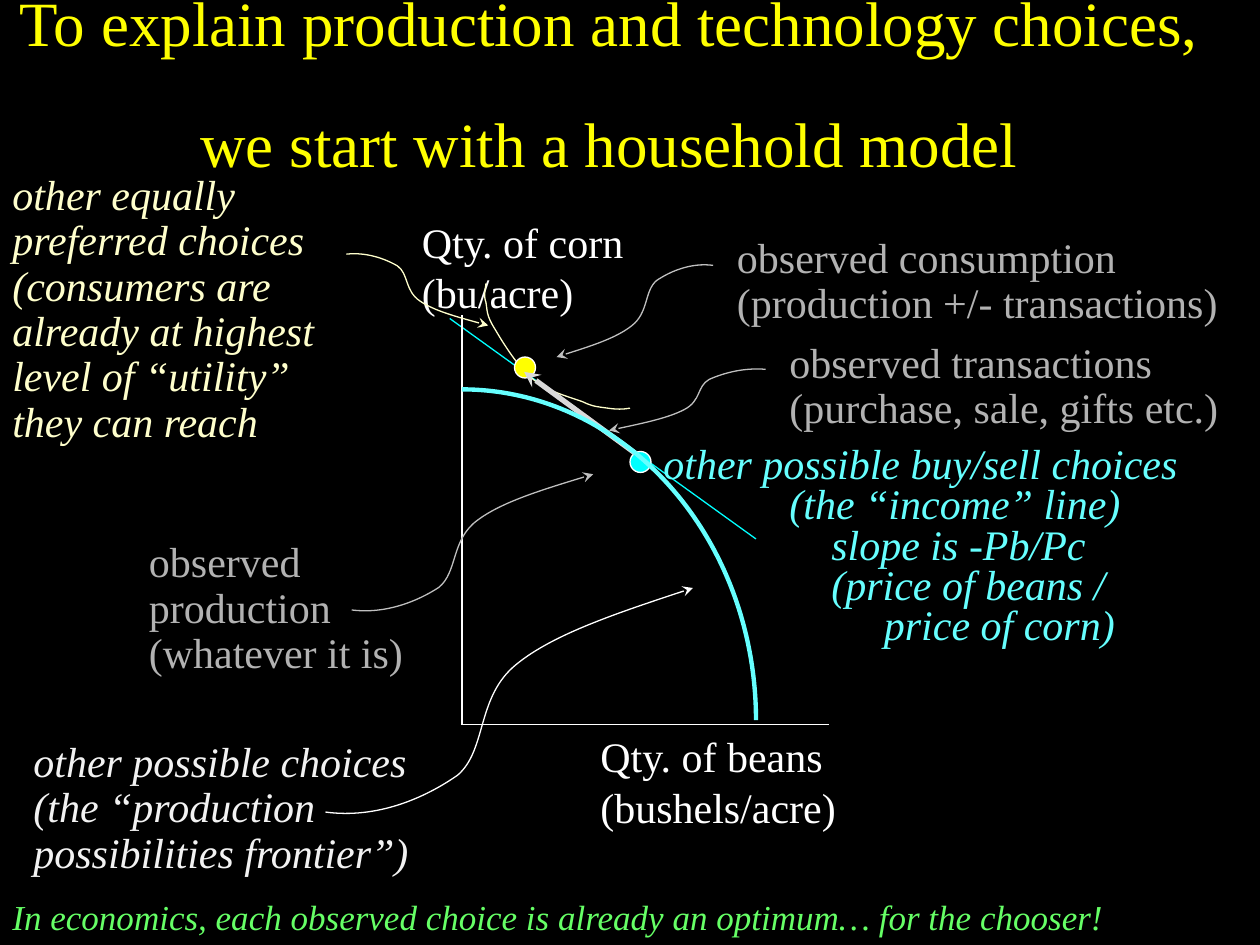
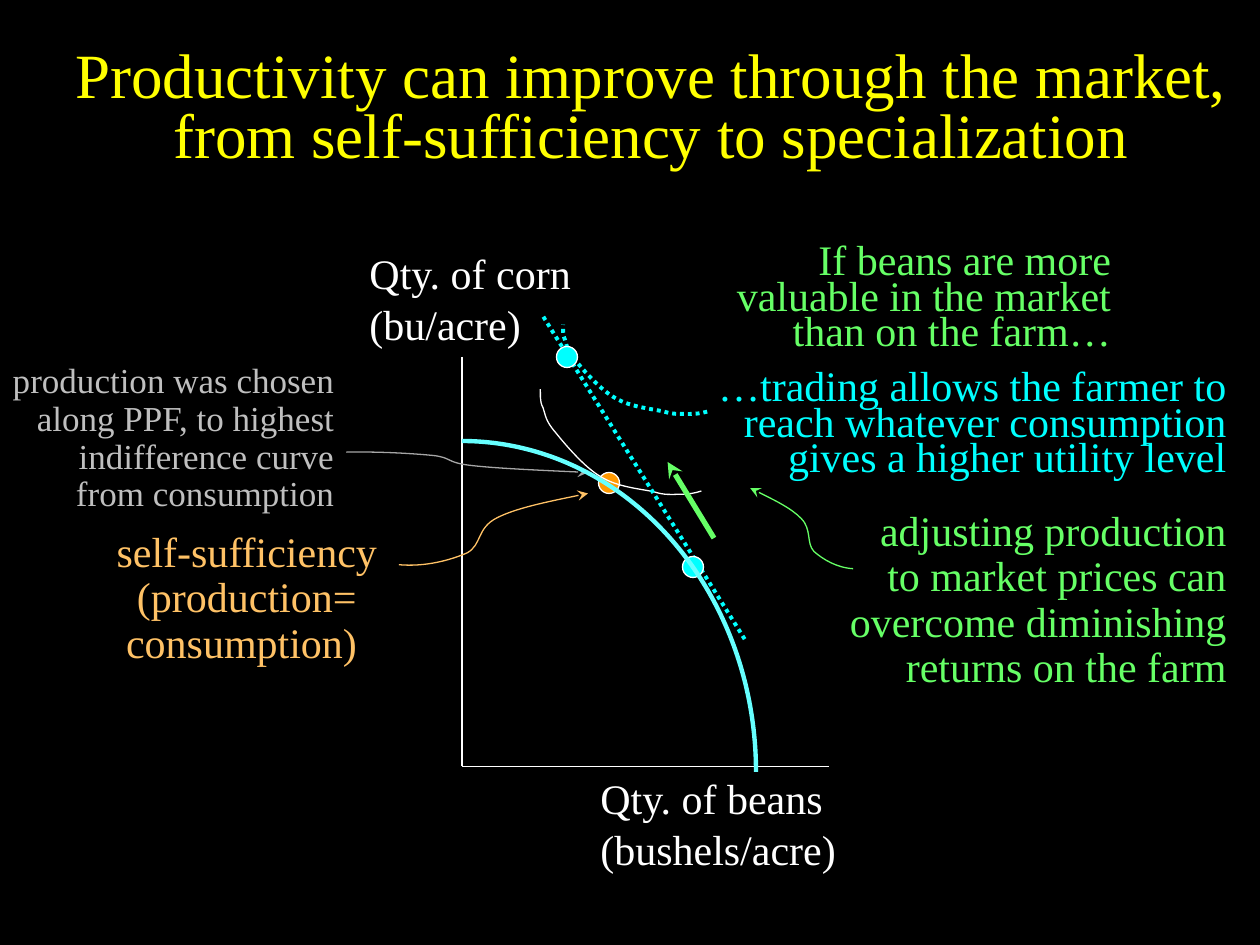
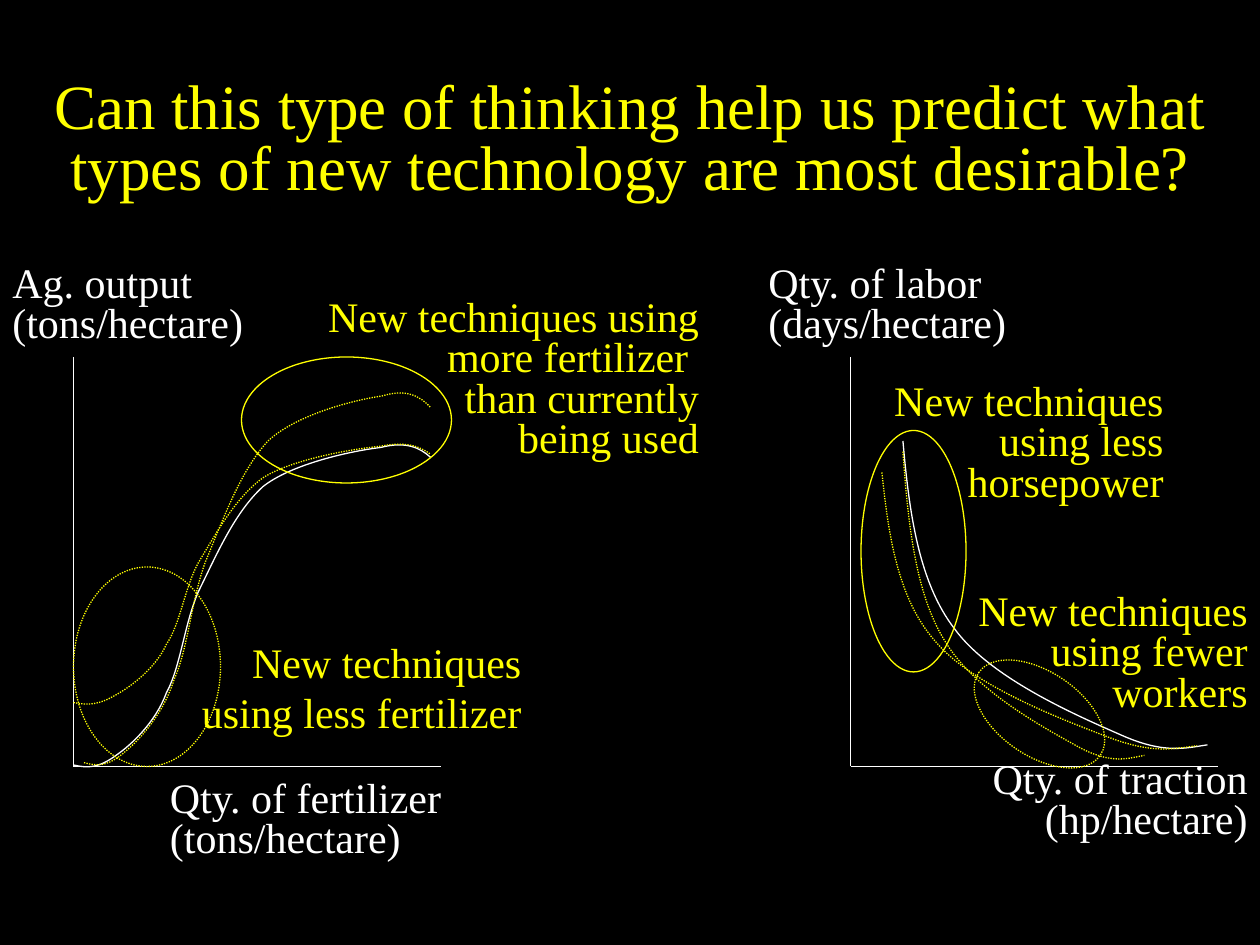
import copy
import math

import lxml.etree
import pptx
import pptx.dml.color
import pptx.enum.dml
import pptx.enum.shapes
import pptx.enum.text
import pptx.oxml.ns
import pptx.util

Pt = pptx.util.Pt
qn = pptx.oxml.ns.qn
SHAPE = pptx.enum.shapes.MSO_SHAPE
ALIGN = pptx.enum.text.PP_ALIGN

BLACK, WHITE, YELLOW, CYAN = "000000", "FFFFFF", "FFFF00", "00FFFF"
PALE_CYAN, GREEN, CREAM, ORANGE = "66FFFF", "66FF66", "FFFFCC", "FF9900"
PEACH, OFF_WHITE, GRAY, SILVER = "FFC266", "F2F2F2", "B2B2B2", "BFBFBF"
LIGHT_GRAY, DARK_GRAY = "D9D9D9", "A6A6A6"

SWEEP = [(0, .03), (.14, 0), (.27, .09), (.36, .19), (.44, .3), (.41, .53),
         (.52, .67), (.62, .8), (.81, .9), (1, 1)]
INDIFFERENCE = [(0, .01), (.05, 0), (.09, 0), (.15, .01), (.21, .02), (.25, .02),
                (.32, .06), (.41, .1), (.56, .14), (.66, .24), (.76, .33),
                (.87, .54), (.92, .64), (.98, .75), (.97, .79), (.98, .85),
                (1, .91), (.98, .97), (.98, 1)]
RESPONSE = [(0, .01), (.04, 0), (.07, 0), (.12, .04), (.16, .07), (.23, .14),
            (.26, .23), (.3, .31), (.31, .44), (.35, .54), (.4, .65), (.45, .78),
            (.53, .86), (.61, .93), (.78, .97), (.86, .98), (.93, 1), (.97, .98),
            (1, .95)]
ISOQUANT = [(0, 0), (.02, .22), (.05, .45), (.17, .6), (.29, .76), (.58, .88),
            (.72, .94), (.86, 1), (.93, .98), (1, .97)]


def color(value):
    return pptx.dml.color.RGBColor.from_string(value)


class Sketch:
    """Draws text, curves and axes on the current slide in one shared style."""

    def __init__(self):
        self.deck = pptx.Presentation()
        self.deck.slide_width, self.deck.slide_height = Pt(720), Pt(540)
        self.font = "Times New Roman"
        self.page = None

    def new_page(self):
        self.page = self.deck.slides.add_slide(self.deck.slide_layouts[6])
        fill = self.page.background.fill
        fill.solid()
        fill.fore_color.rgb = color(BLACK)

    def text(self, lines, left, top, width, height, tint, size=24, spacing=0.9,
             align=ALIGN.LEFT, italic=False, indents=None):
        box = self.page.shapes.add_textbox(Pt(left), Pt(top), Pt(width), Pt(height))
        frame = box.text_frame
        frame.word_wrap = True
        frame.auto_size = pptx.enum.text.MSO_AUTO_SIZE.SHAPE_TO_FIT_TEXT
        for index, line in enumerate(lines):
            para = frame.add_paragraph() if index else frame.paragraphs[0]
            para.alignment = align
            para.line_spacing = spacing
            if indents:
                para._p.get_or_add_pPr().set("marL", str(Pt(indents[index])))
            for number, piece in enumerate(line.split("\n")):
                if number:
                    para.add_line_break()
                    para._p[-1].append(copy.deepcopy(span._r.rPr))
                span = para.add_run()
                span.text = piece
                span.font.name = self.font
                span.font.size = Pt(size)
                span.font.italic = italic
                span.font.color.rgb = color(tint)
        return frame

    def title(self, words, left, top, width, height):
        frame = self.text([words], left, top, width, height, YELLOW, 36, 0.8, ALIGN.CENTER)
        frame.auto_size = pptx.enum.text.MSO_AUTO_SIZE.NONE
        frame.vertical_anchor = pptx.enum.text.MSO_ANCHOR.MIDDLE

    def axis_label(self, lines, left, top, width, height=65, spacing=1.0):
        self.text(lines, left, top, width, height, WHITE, spacing=spacing)

    def stroke(self, item, tint, weight, dotted=False, arrow=False):
        item.line.color.rgb = color(tint)
        item.line.width = Pt(weight)
        if dotted:
            item.line.dash_style = pptx.enum.dml.MSO_LINE.ROUND_DOT
        if arrow:
            outline = item.line._get_or_add_ln()
            lxml.etree.SubElement(outline, qn("a:tailEnd")).set("type", "stealth")

    def line(self, start, end, tint, weight=0.75, dotted=False, arrow=False):
        ends = [Pt(value) for value in (*start, *end)]
        link = self.page.shapes.add_connector(pptx.enum.shapes.MSO_CONNECTOR.STRAIGHT, *ends)
        self.stroke(link, tint, weight, dotted, arrow)
        lxml.etree.SubElement(link._element.spPr, qn("a:effectLst"))

    def axes(self, left, bottom):
        self.line((left, bottom - 234), (left, bottom), WHITE)
        self.line((left, bottom), (left + 210, bottom), WHITE)

    def curve(self, knots, start, end, tint, weight=0.75, dotted=False, arrow=False, turn=0):
        width, height = end[0] - start[0], end[1] - start[1]
        middle_x, middle_y = start[0] + width / 2, start[1] + height / 2
        cosine, sine = math.cos(math.radians(turn)), math.sin(math.radians(turn))
        points = []
        for across, along in knots:
            x, y = (across - 0.5) * width, (along - 0.5) * height
            points.append((Pt(middle_x + x * cosine - y * sine),
                           Pt(middle_y + x * sine + y * cosine)))
        builder = self.page.shapes.build_freeform(*points[0])
        builder.add_line_segments(points[1:], close=False)
        shape = builder.convert_to_shape()
        outline = shape._element.find(".//" + qn("a:path"))
        segments = outline.findall(qn("a:lnTo"))
        for first in range(0, len(segments), 3):
            bend = lxml.etree.SubElement(outline, qn("a:cubicBezTo"))
            for segment in segments[first:first + 3]:
                bend.append(segment[0])
                outline.remove(segment)
        shape.shadow.inherit = False
        shape.fill.background()
        self.stroke(shape, tint, weight, dotted, arrow)

    def pointer(self, start, end, tint, turn=0):
        self.curve(SWEEP, start, end, tint, arrow=True, turn=turn)

    def outline(self, kind, left, top, width, height, tint, weight=0.75, dotted=False, turn=0):
        shape = self.page.shapes.add_shape(kind, Pt(left), Pt(top), Pt(width), Pt(height))
        shape.shadow.inherit = False
        shape.fill.background()
        shape.rotation = turn
        self.stroke(shape, tint, weight, dotted)
        return shape

    def dot(self, left, top, tint):
        shape = self.outline(SHAPE.OVAL, left, top, 12, 12, WHITE)
        shape.fill.solid()
        shape.fill.fore_color.rgb = color(tint)

    def frontier(self, top):
        self.outline(SHAPE.ARC, 96, top, 336, 378, PALE_CYAN, 2.5)


def household_model(sketch):
    sketch.new_page()
    sketch.title("To explain production and technology choices, \n"
                 "we start with a household model", 0, 24, 696, 54)
    sketch.line((257, 182), (432, 308), CYAN)
    sketch.axes(264, 414)
    sketch.axis_label(["Qty. of corn", "(bu/acre)"], 234, 120, 135)
    sketch.axis_label(["Qty. of beans", "(bushels/acre)"], 336, 414, 153)
    sketch.text(["other possible buy/sell choices", "(the “income” line)",
                 "slope is -Pb/Pc", "(price of beans /", "price of corn)"],
                372, 252, 315, 124, PALE_CYAN, spacing=0.8, italic=True,
                indents=(0, 72, 96, 96, 126))
    sketch.dot(360, 258, CYAN)
    sketch.curve(INDIFFERENCE, (360, 234), (276, 162), CREAM)
    sketch.dot(294, 204, YELLOW)
    sketch.text(["observed production", "(whatever it is)"], 78, 306, 168, 86, GRAY)
    sketch.pointer((201, 351), (339, 271), SILVER)
    sketch.text(["observed consumption", "(production +/- transactions)"],
                414, 132, 306, 60, GRAY)
    sketch.pointer((407.5, 150), (318, 204), SILVER)
    sketch.text(["other possible choices", "(the “production possibilities frontier”)"],
                12, 420, 231, 86, OFF_WHITE, italic=True)
    sketch.pointer((186, 468), (396, 336), WHITE)
    sketch.text(["In economics, each observed choice is already an optimum… for the chooser!"],
                0, 511, 660, 29, GREEN, size=20, italic=True)
    sketch.line((363, 259), (299.5, 212.5), LIGHT_GRAY, 3, arrow=True)
    sketch.text(["observed transactions", "(purchase, sale, gifts etc.)"],
                444, 192, 306, 60, GRAY)
    sketch.pointer((437.5, 210), (348, 246), SILVER)
    sketch.text(["other equally preferred choices (consumers are already at highest",
                 "level of “utility” they can reach"], 0, 96, 216, 164, CREAM, italic=True)
    sketch.pointer((198, 144), (279, 186), CREAM)
    sketch.frontier(222.5)


def specialization(sketch):
    sketch.new_page()
    sketch.title("Productivity can improve through the market,\n"
                 "from self-sufficiency to specialization", 24, 36, 696, 54)
    sketch.axes(264, 438)
    sketch.axis_label(["Qty. of corn", "(bu/acre)"], 204, 138, 135)
    sketch.axis_label(["Qty. of beans", "(bushels/acre)"], 336, 438, 153)
    sketch.text(["If beans are more valuable in the market than on the farm…"],
                396, 138, 246, 68, GREEN, spacing=0.7, align=ALIGN.RIGHT)
    sketch.dot(342, 270, ORANGE)
    sketch.curve(INDIFFERENCE, (396, 288), (312, 216), WHITE, turn=-8.6)
    sketch.line((310.5, 181), (426, 366), CYAN, 2.25, dotted=True)
    sketch.dot(390, 318, CYAN)
    sketch.curve(INDIFFERENCE, (401, 240.5), (323.5, 181), CYAN, 2.25, dotted=True, turn=-6.6)
    sketch.dot(318, 198, CYAN)
    sketch.text(["self-sufficiency", "(production= consumption) "],
                42, 300, 198, 86, PEACH, align=ALIGN.CENTER)
    sketch.pointer((228, 324), (336, 282), PEACH)
    sketch.line((408, 307.5), (381.5, 264), GREEN, 3, arrow=True)
    sketch.text(["adjusting production",
                 "to market prices can overcome diminishing returns on the farm"],
                462, 288, 246, 112, GREEN, align=ALIGN.RIGHT)
    sketch.pointer((491, 320.5), (425, 284.5), GREEN, turn=10.2)
    sketch.text(["production was chosen along PPF, to highest indifference curve",
                 "from consumption"], 0, 204, 198, 94, SILVER, size=20, align=ALIGN.RIGHT)
    sketch.pointer((198, 258), (336, 270), DARK_GRAY)
    sketch.text(["…trading allows the farmer to reach whatever consumption "
                 "gives a higher utility level"],
                378, 210, 330, 68, CYAN, spacing=0.7, align=ALIGN.RIGHT)
    sketch.frontier(252)


def new_technology(sketch):
    sketch.new_page()
    sketch.axes(42, 438)
    sketch.axes(486, 438)
    sketch.curve(RESPONSE, (42, 439), (246, 252), WHITE)
    sketch.curve(ISOQUANT, (516, 252), (690, 431), WHITE)
    for knots, start, end in (
            (RESPONSE, (42, 403), (246, 252)), (RESPONSE, (48, 438), (246, 222)),
            (ISOQUANT, (504, 270), (684, 431)), (ISOQUANT, (516, 258), (654, 437))):
        sketch.curve(knots, start, end, YELLOW, dotted=True)
    sketch.outline(SHAPE.OVAL, 42, 324, 84, 114, YELLOW, dotted=True)
    sketch.outline(SHAPE.OVAL, 138, 204, 120, 72, YELLOW)
    sketch.outline(SHAPE.OVAL, 492, 246, 60, 138, YELLOW)
    sketch.outline(SHAPE.OVAL, 552, 384, 84, 48, YELLOW, dotted=True, turn=34.2)
    sketch.title("Can this type of thinking help us predict what "
                 "types of new technology are most desirable?", 0, 36, 720, 90)
    sketch.axis_label(["Ag. output", "(tons/hectare)"], 0, 148.5, 150, 53, 0.8)
    sketch.axis_label(["Qty. of fertilizer", "(tons/hectare)"], 90, 443, 181, 53, 0.8)
    sketch.axis_label(["Qty. of labor", "(days/hectare)"], 432, 148.5, 155, 53, 0.8)
    sketch.text(["Qty. of traction", "(hp/hectare)"], 516, 432, 204, 53, WHITE,
                spacing=0.8, align=ALIGN.RIGHT)
    for lines, left, top, width, height, spacing in (
            (["New techniques using less horsepower"], 498, 216, 174, 76, 0.8),
            (["New techniques using fewer workers"], 533, 336, 187, 76, 0.8),
            (["New techniques using", " more fertilizer ", "than currently", "being used"],
             176, 168, 230.5, 99, 0.8),
            (["New techniques", "using less fertilizer"], 104, 360, 201, 65, 1.0)):
        sketch.text(lines, left, top, width, height, YELLOW, spacing=spacing,
                    align=ALIGN.RIGHT)


def main():
    sketch = Sketch()
    household_model(sketch)
    specialization(sketch)
    new_technology(sketch)
    sketch.deck.save("out.pptx")


if __name__ == "__main__":
    main()
